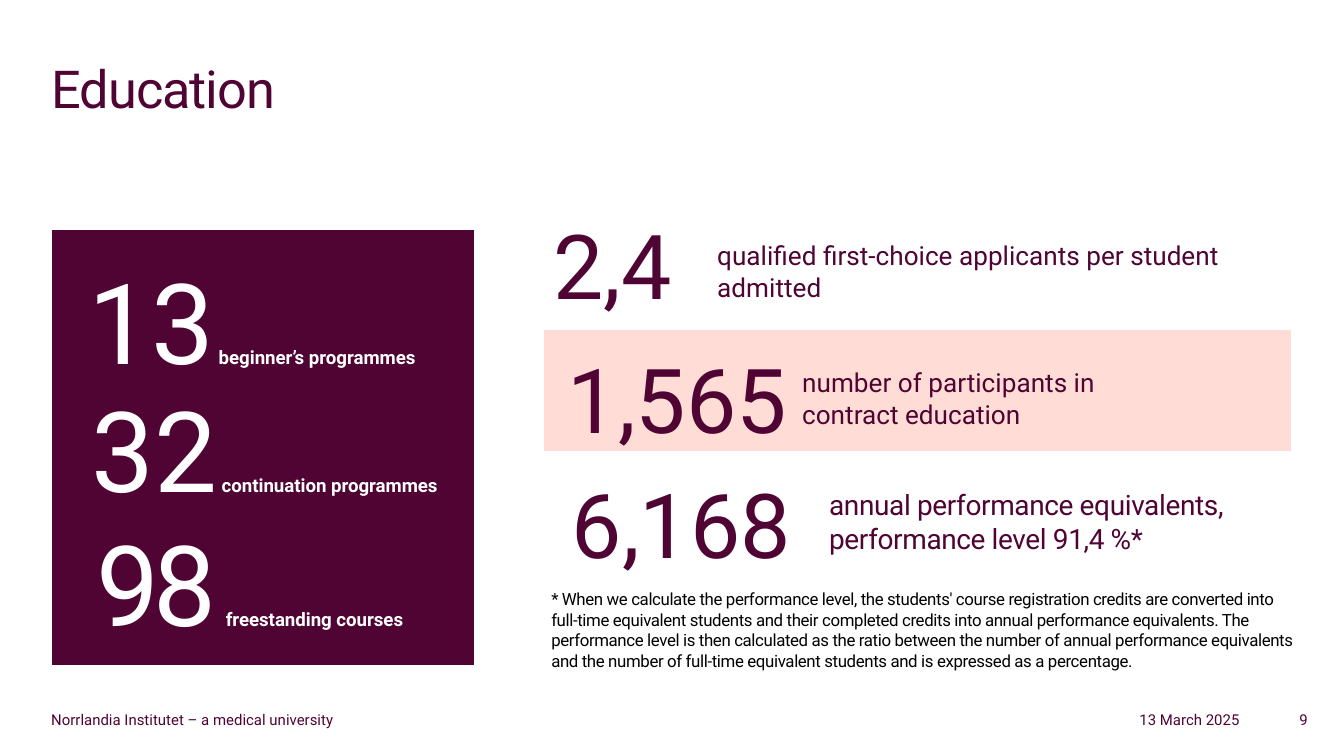
from pptx import Presentation
from pptx.dml.color import RGBColor
from pptx.enum.shapes import MSO_SHAPE
from pptx.enum.text import MSO_ANCHOR, MSO_AUTO_SIZE, PP_ALIGN
from pptx.util import Pt

PX = 914400 / 134.4
PLUM, PINK, WHITE, BLACK = "4F0433", "FFDDD6", "FFFFFF", "000000"

TITLE = "Education"
# number, label, left, top, width, number spacing, gap spacing
PROGRAMMES = [
    ("13", "beginner’s programmes", 75, 246, 419, 0, 0),
    ("32", "continuation programmes", 78, 374, 429, 0, 0),
    ("98", "freestanding courses", 83, 508, 446, -3, 2.5),
]
# number, its left and top, label lines, label box, label size, label spacing
FIGURES = [
    ("2,4", 454, 203, ["qualified first-choice applicants per student admitted"],
     (704, 233, 552, 77), 14, 0),
    ("1,565", 519, 337, ["number of participants in", "contract education"],
     (789, 360, 672, 77), 14, 0),
    ("6,168", 523, 462, ["annual performance equivalents,", "performance level 91,4 %*"],
     (816, 481, 476, 82), 15, -0.2),
]
FOOTNOTE = (
    "* When we calculate the performance level, the students' course registration "
    "credits are converted into full-time equivalent students and their completed "
    "credits into annual performance equivalents. The performance level is then "
    "calculated as the ratio between the number of annual performance equivalents "
    "and the number of full-time equivalent students and is expressed as a percentage."
)
FOOTER = [
    ("Norrlandia Institutet – a medical university", 38, 380, PP_ALIGN.LEFT),
    ("13 March 2025", 973, 280, PP_ALIGN.RIGHT),
    ("9", 1220, 101, PP_ALIGN.RIGHT),
]


def px(*values):
    return [round(v * PX) for v in values]


def rgb(colour):
    return RGBColor.from_string(colour)


def add_run(p, text, size=14, color=PLUM, bold=False, spacing=0):
    r = p.add_run()
    r.text = text
    r.font.name = "Roboto"
    r.font.size = Pt(size)
    r.font.bold = bold
    r.font.color.rgb = rgb(color)
    if spacing:
        r.font._element.set("spc", str(round(spacing * 100)))


def fill_text(shape, lines, align=PP_ALIGN.LEFT, leading=None, **font):
    """Write lines, split by line breaks, as one top-anchored paragraph."""
    tf = shape.text_frame
    tf.word_wrap = True
    tf.auto_size = MSO_AUTO_SIZE.NONE
    tf.vertical_anchor = MSO_ANCHOR.TOP
    p = tf.paragraphs[0]
    p.alignment = align
    if leading:
        p.line_spacing = Pt(leading)
    for i, line in enumerate(lines):
        if i:
            p.add_line_break()
        add_run(p, line, **font)
    return p


def add_text(s, box, lines, **format):
    return fill_text(s.shapes.add_textbox(*px(*box)), lines, **format)


def add_panel(s, box, color):
    sp = s.shapes.add_shape(MSO_SHAPE.RECTANGLE, *px(*box))
    sp.shadow.inherit = False
    sp.fill.solid()
    sp.fill.fore_color.rgb = rgb(color)
    sp.line.fill.background()


def main():
    prs = Presentation()
    prs.slide_width, prs.slide_height = px(1344, 756)
    s = prs.slides.add_slide(prs.slide_layouts[5])

    title = s.shapes.title
    title.left, title.top, title.width, title.height = px(38, 50, 1269, 126)
    fill_text(title, [TITLE], size=28, spacing=-0.5)

    add_panel(s, (52, 230, 422, 435), PLUM)
    for number, label, x, y, w, spacing, gap in PROGRAMMES:
        p = add_text(s, (x, y, w, 149), [number], size=60, color=WHITE, spacing=spacing)
        add_run(p, " ", size=10, color=WHITE, bold=True, spacing=gap)
        add_run(p, label, size=10, color=WHITE, bold=True)

    add_panel(s, (544, 330, 747, 121), PINK)
    for number, x, y, lines, box, size, spacing in FIGURES:
        add_text(s, (x, y, 317, 122), [number], align=PP_ALIGN.CENTER, size=48)
        add_text(s, box, lines, size=size, spacing=spacing)

    add_text(s, (538, 582, 769, 81), [FOOTNOTE], leading=11, size=9,
             color=BLACK, spacing=-0.2)
    for text, x, w, align in FOOTER:
        add_text(s, (x, 704, w, 26), [text], align=align, size=8)

    prs.save("out.pptx")


if __name__ == "__main__":
    main()
